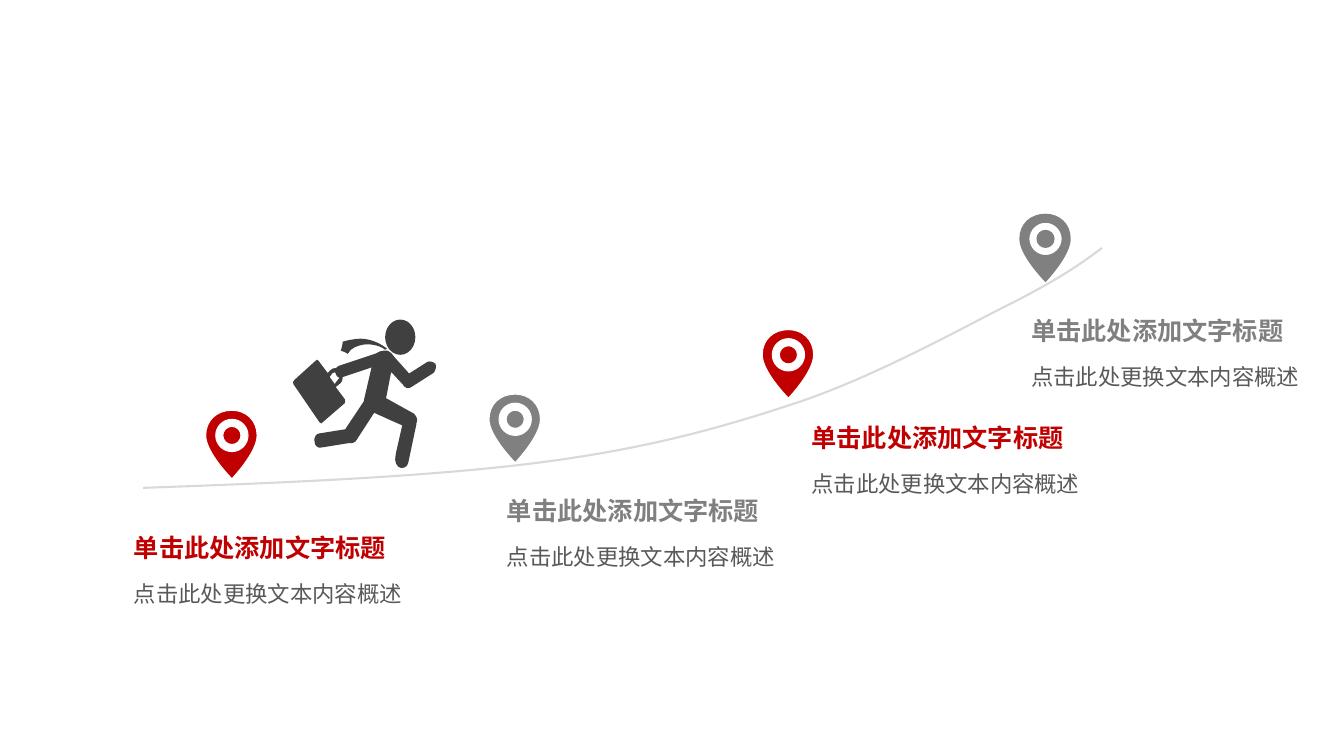
from pptx import Presentation
from pptx.dml.color import RGBColor
from pptx.enum.shapes import MSO_SHAPE
from pptx.enum.text import MSO_ANCHOR
from pptx.oxml.ns import qn
from pptx.util import Inches, Pt

RED = RGBColor(0xC0, 0x00, 0x00)
GRAY = RGBColor(0x80, 0x80, 0x80)
DARK = RGBColor(0x40, 0x40, 0x40)
BODY = RGBColor(0x59, 0x59, 0x59)
LIGHT = RGBColor(0xD9, 0xD9, 0xD9)
WHITE = RGBColor(0xFF, 0xFF, 0xFF)

# An outline is a start point, then (x, y) for a line or six numbers for a curve.
ROAD = [(1.42, 4.84), (2.83, 4.79, 4.25, 4.73, 5.34, 4.59),
        (6.43, 4.45, 7.17, 4.24, 7.95, 3.98), (8.73, 3.71, 9.53, 3.26, 10.03, 3.01),
        (10.52, 2.76, 10.73, 2.61, 10.93, 2.46)]
BODY_AND_LEG = [
    (3.61, 3.97), (3.71, 3.54), (3.72, 3.49, 3.8, 3.47, 3.85, 3.48),
    (3.87, 3.49, 3.89, 3.51, 3.91, 3.54), (4.08, 3.73), (4.11, 3.76, 4.11, 3.8, 4.08, 3.82),
    (4.08, 3.84, 4.06, 3.85, 4.05, 3.85), (4.03, 3.85, 4.02, 3.84, 4.01, 3.83),
    (3.88, 3.69), (3.83, 3.95), (4.1, 4.1), (4.13, 4.12, 4.15, 4.17, 4.13, 4.2),
    (4.13, 4.21), (4.05, 4.59), (4.05, 4.61, 4.03, 4.63, 4.01, 4.64),
    (3.96, 4.65, 3.93, 4.63, 3.92, 4.56), (3.92, 4.52, 3.94, 4.44, 3.94, 4.44),
    (3.99, 4.22), (3.99, 4.22, 3.83, 4.15, 3.79, 4.13),
    (3.76, 4.12, 3.68, 4.08, 3.65, 4.06), (3.63, 4.04, 3.61, 4.01, 3.61, 3.97)]
FRONT_FOREARM = [
    (4.3, 3.7), (4.32, 3.68, 4.33, 3.64, 4.32, 3.61), (4.3, 3.59, 4.26, 3.58, 4.24, 3.59),
    (4.02, 3.73), (3.99, 3.75, 3.99, 3.79, 4, 3.82), (4.02, 3.85, 4.05, 3.86, 4.08, 3.84)]
BACK_ARM = [
    (3.82, 3.6), (3.85, 3.59, 3.87, 3.55, 3.85, 3.52), (3.84, 3.49, 3.81, 3.47, 3.78, 3.49),
    (3.36, 3.63), (3.33, 3.64, 3.32, 3.67, 3.33, 3.71), (3.34, 3.74, 3.37, 3.76, 3.4, 3.74)]
BACK_THIGH = [
    (3.43, 4.25), (3.4, 4.29, 3.41, 4.35, 3.44, 4.38), (3.47, 4.41, 3.52, 4.4, 3.54, 4.36),
    (3.76, 4.02), (3.79, 3.99, 3.78, 3.93, 3.75, 3.9), (3.72, 3.87, 3.68, 3.88, 3.65, 3.92)]
BACK_SHIN = [
    (3.17, 4.3), (3.14, 4.3, 3.11, 4.34, 3.12, 4.38), (3.12, 4.42, 3.15, 4.45, 3.19, 4.44),
    (3.5, 4.39), (3.53, 4.39, 3.55, 4.35, 3.55, 4.31), (3.54, 4.27, 3.51, 4.25, 3.48, 4.25)]
BRIEFCASE = [
    (2.91, 3.81), (2.9, 3.8, 2.91, 3.78, 2.92, 3.77), (3.13, 3.58),
    (3.14, 3.56, 3.15, 3.57, 3.16, 3.58), (3.25, 3.7), (3.28, 3.67),
    (3.31, 3.64, 3.35, 3.65, 3.37, 3.68), (3.38, 3.7), (3.41, 3.73, 3.4, 3.78, 3.38, 3.8),
    (3.33, 3.84), (3.42, 3.96), (3.43, 3.97, 3.42, 3.99, 3.42, 4), (3.2, 4.19),
    (3.2, 4.21, 3.18, 4.2, 3.17, 4.19)]
HANDLE_GAP = [
    (3.35, 3.77), (3.37, 3.76, 3.37, 3.74, 3.36, 3.72), (3.34, 3.71),
    (3.33, 3.69, 3.32, 3.69, 3.3, 3.7), (3.27, 3.74), (3.32, 3.81)]
NECKTIE = [
    (3.6, 3.42), (3.66, 3.41, 3.76, 3.42, 3.82, 3.47), (3.84, 3.46),
    (3.74, 3.38, 3.61, 3.34, 3.49, 3.37), (3.47, 3.37, 3.4, 3.39, 3.4, 3.39),
    (3.4, 3.4, 3.39, 3.46, 3.38, 3.48), (3.4, 3.49, 3.43, 3.49, 3.45, 3.51),
    (3.48, 3.45, 3.55, 3.43, 3.6, 3.42)]
RUNNER = [[BODY_AND_LEG], [FRONT_FOREARM], [BACK_ARM], [BACK_THIGH], [BACK_SHIN],
          [BRIEFCASE, HANDLE_GAP], [NECKTIE]]

# Pin outline, measured from the middle of its top edge.
PIN_DROP = [(0, 0), (-0.15, 0, -0.26, 0.1, -0.26, 0.25), (-0.26, 0.42, 0, 0.68, 0, 0.68),
            (0, 0.68, 0.25, 0.42, 0.25, 0.25), (0.25, 0.1, 0.14, 0, 0, 0)]
PIN_RINGS = (0.16, 0.09)

# Pin centre and top, label left and top, colour, pin edge.
STOPS = [(2.3, 4.07, 1.23, 5.11, RED, WHITE), (5.11, 3.91, 4.93, 4.74, GRAY, WHITE),
         (7.82, 3.27, 7.95, 4.01, RED, WHITE), (10.37, 2.12, 10.13, 2.95, GRAY, None)]


def pairs(seg):
    return list(zip(seg[::2], seg[1::2]))


def shift(outline, dx, dy):
    return [[v + (dy if i % 2 else dx) for i, v in enumerate(seg)] for seg in outline]


def circle(r):
    """Outline of a circle around (0, 0), made of four curves."""
    k = 0.55 * r
    return [(r, 0), (r, k, k, r, 0, r), (-k, r, -r, k, -r, 0),
            (-r, -k, -k, -r, 0, -r), (k, -r, r, -k, r, 0)]


class Canvas:
    font = "Noto Sans CJK SC"

    def __init__(self, slide):
        self.slide = slide
        self.start_group()

    def start_group(self):
        self.shapes = self.slide.shapes.add_group_shape().shapes

    def paint(self, sp, fill, line=None, width=0.75):
        sp.shadow.inherit = False
        for part, color in ((sp.fill, fill), (sp.line.fill, line)):
            if color is None:
                part.background()
            else:
                part.solid()
                part.fore_color.rgb = color
        if line is not None:
            sp.line.width = Pt(width)

    def outline(self, contours, fill=None, line=None, width=0.75, close=True):
        """Draw contours as one freeform, joining each six-number step into a curve."""
        builder = None
        for contour in contours:
            start, *pts = [(Inches(x), Inches(y)) for seg in contour for x, y in pairs(seg)]
            if builder is None:
                builder = self.shapes.build_freeform(*start)
            else:
                builder.move_to(*start)
            builder.add_line_segments(pts, close=close)
        sp = builder.convert_to_shape()
        geom = next(sp._element.iter(qn("a:path")))
        lines = iter(geom.findall(qn("a:lnTo")))
        for seg in (seg for contour in contours for seg in contour[1:]):
            nodes = [next(lines) for _ in pairs(seg)]
            if len(nodes) == 3:
                curve = geom.makeelement(qn("a:cubicBezTo"), {})
                nodes[0].addprevious(curve)
                for node in nodes:
                    curve.append(node[0])
                    geom.remove(node)
        self.paint(sp, fill, line, width)

    def ellipse(self, x, y, w, h, fill):
        sp = self.shapes.add_shape(MSO_SHAPE.OVAL, Inches(x), Inches(y), Inches(w), Inches(h))
        self.paint(sp, fill)

    def pin(self, x, y, fill, edge):
        rings = [shift(circle(r), x, y + 0.25) for r in PIN_RINGS]
        self.outline([shift(PIN_DROP, x, y), *rings], fill, edge)

    def text(self, x, y, w, h, text, anchor=MSO_ANCHOR.TOP, spacing=None, **font):
        tf = self.shapes.add_textbox(Inches(x), Inches(y), Inches(w), Inches(h)).text_frame
        tf.word_wrap = True
        tf.vertical_anchor = anchor
        p = tf.paragraphs[0]
        p.line_spacing = spacing
        r = p.add_run()
        r.text = text
        r.font.color.rgb = font.pop("color")
        for name, value in {"name": self.font, **font}.items():
            setattr(r.font, name, value)
        latin = next(r._r.iter(qn("a:latin")))
        latin.addnext(latin.makeelement(qn("a:ea"), {"typeface": self.font}))

    def label(self, x, y, color):
        self.start_group()
        self.text(x, y + 0.6, 3.2, 0.45, "点击此处更换文本内容概述", size=Pt(16), color=BODY)
        self.text(x, y, 2.91, 0.44, "单击此处添加文字标题", MSO_ANCHOR.MIDDLE, 1.7,
                  size=Pt(18), bold=True, color=color)


def main():
    prs = Presentation()
    prs.slide_width, prs.slide_height = Inches(13.33), Inches(7.5)
    canvas = Canvas(prs.slides.add_slide(prs.slide_layouts[6]))
    canvas.outline([ROAD], line=LIGHT, width=1.5, close=False)
    canvas.ellipse(3.82, 3.17, 0.3, 0.35, DARK)
    for part in RUNNER:
        canvas.outline(part, DARK)
    for x, y, _, _, color, edge in STOPS:
        canvas.pin(x, y, color, edge)
    for _, _, x, y, color, _ in STOPS:
        canvas.label(x, y, color)
    prs.save("out.pptx")


if __name__ == "__main__":
    main()
